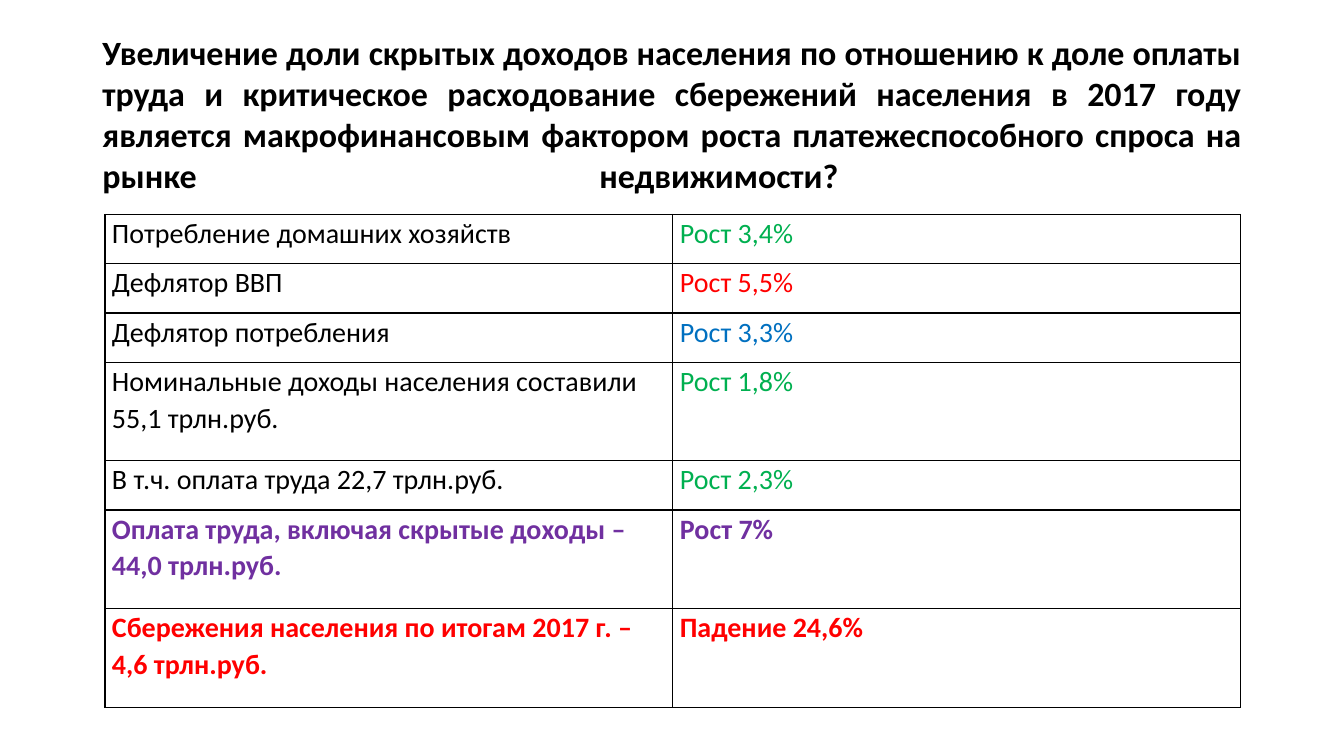
"""Builds a slide with a table of Russian household income indicators for 2017."""
from lxml.etree import SubElement
from pptx import Presentation
from pptx.dml.color import RGBColor
from pptx.enum.text import MSO_ANCHOR, MSO_AUTO_SIZE, PP_ALIGN
from pptx.oxml.ns import qn
from pptx.util import Pt

FONT = "Calibri"
COLORS = {
    "black": "000000",
    "green": "00B050",
    "red": "FF0000",
    "blue": "0070C0",
    "purple": "7030A0",
}
TITLE = (
    "Увеличение доли скрытых доходов населения по отношению к доле оплаты труда "
    "и критическое расходование сбережений населения в 2017 году является "
    "макрофинансовым фактором роста платежеспособного спроса на рынке недвижимости? "
)
# label, change, label color, change color, bold, height in units
ROWS = [
    ("Потребление домашних хозяйств", "Рост 3,4%", "black", "green", False, 1),
    ("Дефлятор ВВП", "Рост 5,5%", "black", "red", False, 1),
    ("Дефлятор потребления", "Рост 3,3%", "black", "blue", False, 1),
    ("Номинальные доходы населения составили 55,1 трлн.руб.", "Рост 1,8%",
     "black", "green", False, 2),
    ("В т.ч. оплата труда 22,7 трлн.руб.", "Рост 2,3%", "black", "green", False, 1),
    ("Оплата труда, включая скрытые доходы – 44,0 трлн.руб.", "Рост 7%",
     "purple", "purple", True, 2),
    ("Сбережения населения по итогам 2017 г. – 4,6 трлн.руб.", "Падение 24,6%",
     "red", "red", True, 2),
]
TABLE_LEFT, TABLE_TOP = 75, 153.2
COL_WIDTH, ROW_UNIT = 405.6, 35.2


def style(p, size, color, bold):
    p.font.name = FONT
    p.font.size = Pt(size)
    p.font.bold = bold
    p.font.color.rgb = RGBColor.from_string(COLORS[color])


def add_borders(cell):
    tc_pr = cell._tc.get_or_add_tcPr()
    for i, side in enumerate(("lnL", "lnR", "lnT", "lnB")):
        ln = SubElement(tc_pr, qn(f"a:{side}"), w=str(Pt(1)))
        fill = SubElement(ln, qn("a:solidFill"))
        SubElement(fill, qn("a:srgbClr"), val=COLORS["black"])
        tc_pr.insert(i, ln)


def add_title(s):
    sp = s.shapes.title
    sp.left, sp.top, sp.width, sp.height = Pt(66), Pt(28.8), Pt(828), Pt(104.4)
    tf = sp.text_frame
    tf.word_wrap = True
    tf.auto_size = MSO_AUTO_SIZE.NONE
    tf.vertical_anchor = MSO_ANCHOR.MIDDLE
    p = tf.paragraphs[0]
    p.alignment = PP_ALIGN.JUSTIFY
    p.add_line_break()
    p.add_run().text = TITLE
    p.add_line_break()
    style(p, 24.3, "black", True)


def fill_cell(cell, text, color, bold):
    cell.margin_left = cell.margin_right = Pt(5)
    cell.margin_top = cell.margin_bottom = 0
    cell.fill.background()
    add_borders(cell)
    p = cell.text_frame.paragraphs[0]
    p.text = text
    p.line_spacing = 1.07
    style(p, 20, color, bold)


def add_indicators(s):
    units = sum(row[-1] for row in ROWS)
    table = s.shapes.add_table(
        len(ROWS), 2, Pt(TABLE_LEFT), Pt(TABLE_TOP),
        Pt(2 * COL_WIDTH), Pt(units * ROW_UNIT)).table
    table.first_row = table.horz_banding = False
    for col in table.columns:
        col.width = Pt(COL_WIDTH)
    for i, (label, change, label_color, change_color, bold, height) in enumerate(ROWS):
        table.rows[i].height = Pt(height * ROW_UNIT)
        fill_cell(table.cell(i, 0), label, label_color, bold)
        fill_cell(table.cell(i, 1), change, change_color, bold)


def main():
    prs = Presentation()
    prs.slide_width, prs.slide_height = Pt(960), Pt(540)
    s = prs.slides.add_slide(prs.slide_layouts[5])
    add_title(s)
    add_indicators(s)
    prs.save("out.pptx")


if __name__ == "__main__":
    main()
